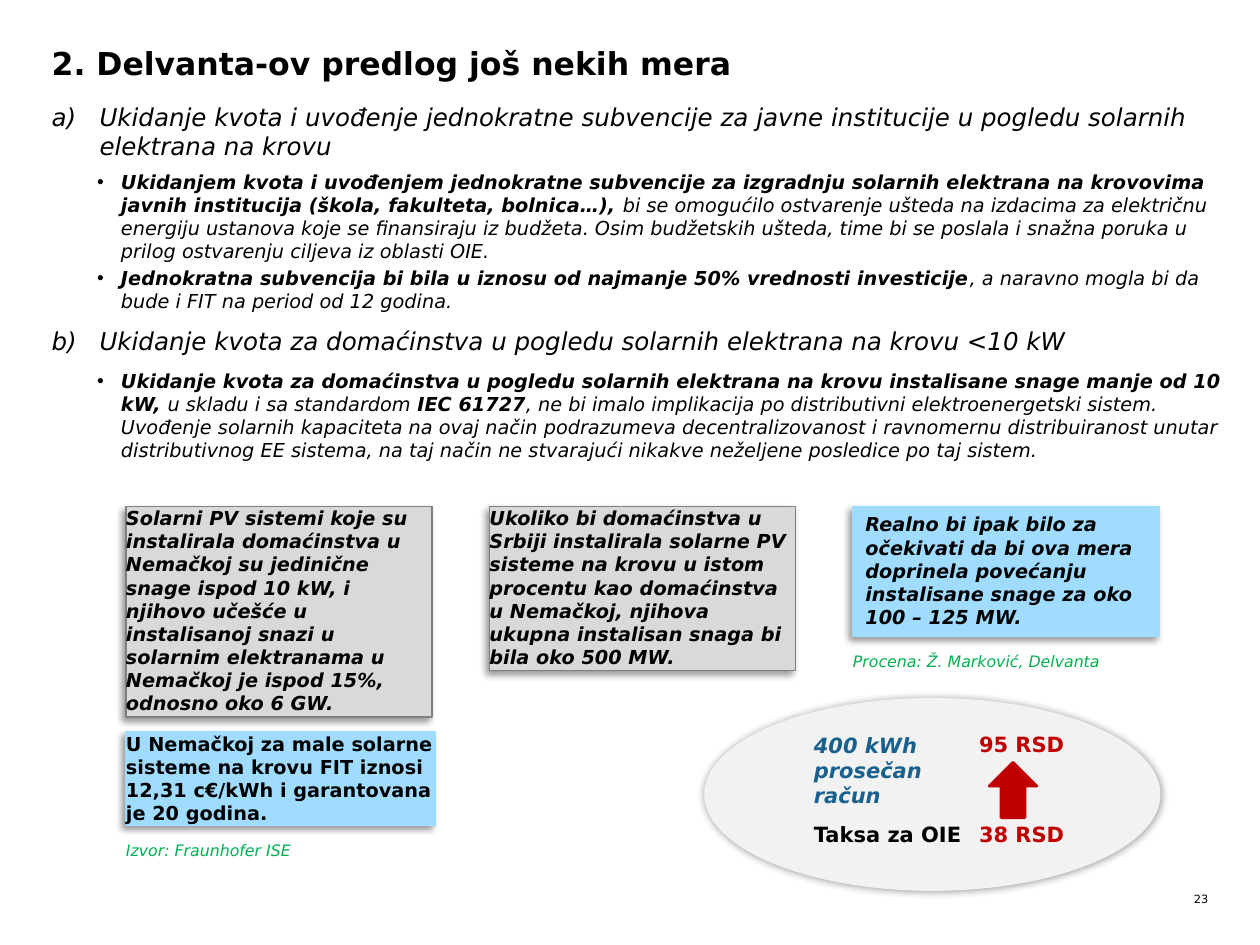
from dataclasses import dataclass

from lxml.etree import SubElement
from pptx import Presentation
from pptx.dml.color import RGBColor
from pptx.enum.shapes import MSO_SHAPE as Kind
from pptx.enum.text import MSO_ANCHOR as Anchor, MSO_AUTO_SIZE as Fit, PP_ALIGN as Align
from pptx.oxml.ns import qn
from pptx.util import Inches, Pt


@dataclass(frozen=True)
class Theme:
    font: str = "DejaVu Sans"
    ink: str = "000000"
    red: str = "C00000"
    blue: str = "17618C"
    green: str = "00B050"
    sky: str = "A0DCFF"
    gray: str = "D9D9D9"
    edge: str = "808080"
    pale: str = "F2F2F2"
    title: float = 18
    head: float = 14
    mid: float = 12
    body: float = 11
    note: float = 9
    page: float = 6.5


T = Theme()
LETTER, DOT = "letter", "dot"


def place(shape, box):
    shape.left, shape.top, shape.width, shape.height = map(Inches, box)
    return shape


def mark(para, kind, start, hang):
    """Give a paragraph a letter or a dot with a hanging indent."""
    props = para._p.get_or_add_pPr()
    props.set("marL", str(Inches(hang)))
    props.set("indent", str(-Inches(hang)))
    if kind == LETTER:
        SubElement(props, qn("a:buAutoNum"), type="alphaLcParenR", startAt=str(start))
    else:
        SubElement(props, qn("a:buChar"), char="•")


def write(shape, *paras, size=T.body, color=T.ink, bold=False, italic=False,
          align=Align.LEFT, pad=(0, 0), bullet=None, start=1, hang=0.19, gap=2):
    """Each paragraph is a string or a list of (text, bold) runs."""
    frame = shape.text_frame
    frame.word_wrap, frame.auto_size = True, Fit.NONE
    frame.vertical_anchor = Anchor.TOP
    frame.margin_left = frame.margin_right = Inches(pad[0])
    frame.margin_top = frame.margin_bottom = Inches(pad[1])
    for i, runs in enumerate(paras):
        para = frame.add_paragraph() if i else frame.paragraphs[0]
        if bullet:
            mark(para, bullet, start, hang)
        para.alignment = align
        para.space_before = Pt(gap if i else 0)
        for text, heavy in [(runs, bold)] if isinstance(runs, str) else runs:
            run = para.add_run()
            run.text = text
            font = run.font
            font.name, font.size = T.font, Pt(size)
            font.bold, font.italic = heavy, italic
            font.color.rgb = RGBColor.from_string(color)


def label(shapes, box, text, **style):
    write(shapes.add_textbox(*map(Inches, box)), text, **style)


def draw(shapes, kind, box, fill, line, width=0.75, shade=None):
    """Add a filled shape; shade is (blur, distance, angle)."""
    shape = shapes.add_shape(kind, *map(Inches, box))
    shape.shadow.inherit = False
    shape.fill.solid()
    shape.fill.fore_color.rgb = RGBColor.from_string(fill)
    shape.line.color.rgb = RGBColor.from_string(line)
    shape.line.width = Pt(width)
    if shade:
        blur, dist, angle = shade
        effects = shape._element.spPr.find(qn("a:effectLst"))
        outer = SubElement(effects, qn("a:outerShdw"), blurRad=str(Pt(blur)),
                           dist=str(Pt(dist)), dir=str(angle * 60000),
                           algn="ctr", rotWithShape="0")
        tint = SubElement(outer, qn("a:srgbClr"), val="000000")
        SubElement(tint, qn("a:alpha"), val="40000")
    return shape


def point(head, list_, tops, start, title, *paras):
    """A lettered heading with its bulleted list; tops are (y, height) pairs."""
    (y, h), (y2, h2) = tops
    write(place(head, (0.41, y, 9.12, h)), title, size=T.head, italic=True,
          bullet=LETTER, start=start, hang=0.38)
    write(place(list_, (0.77, y2, 8.96, h2)), *paras, italic=True, bullet=DOT)


def card(shapes, box, text, fill, line, italic=True, pad=(0, 0)):
    shape = draw(shapes, Kind.RECTANGLE, box, fill, line, shade=(4, 3, 135))
    write(shape, text, bold=True, italic=italic, pad=pad)


def cards(shapes, x, y):
    """Three cards in a row, one more below the first, and two credits."""
    wide = 2.43
    cols = [x + i * 2.885 for i in range(3)]
    card(shapes, (cols[0], y, wide, 1.67),
         "Solarni PV sistemi koje su instalirala domaćinstva u Nemačkoj su jedinične "
         "snage ispod 10 kW, i njihovo učešće u instalisanoj snazi u solarnim "
         "elektranama u Nemačkoj je ispod 15%, odnosno oko 6 GW.", T.gray, T.edge)
    card(shapes, (cols[1], y, wide, 1.3),
         "Ukoliko bi domaćinstva u Srbiji instalirala solarne PV sisteme na krovu u "
         "istom procentu kao domaćinstva u Nemačkoj, njihova ukupna instalisan snaga "
         "bi bila oko 500 MW.", T.gray, T.edge)
    card(shapes, (cols[2], y, wide, 1.03),
         "Realno bi ipak bilo za očekivati da bi ova mera doprinela povećanju "
         "instalisane snage za oko 100 – 125 MW.", T.sky, T.sky, pad=(0.1, 0.05))
    card(shapes, (cols[0], y + 1.79, 2.46, 0.74),
         "U Nemačkoj za male solarne sisteme na krovu FIT iznosi 12,31 c€/kWh i "
         "garantovana je 20 godina.", T.sky, T.sky, italic=False)
    for col, down, text in ((0, 2.65, "Izvor: Fraunhofer ISE"),
                            (2, 1.15, "Procena: Ž. Marković, Delvanta")):
        label(shapes, (cols[col], y + down, 2.13, 0.15), text,
              size=T.note, color=T.green, italic=True)


def bill(shapes, x, y, w, h):
    """The ellipse with the rise of the fee on an average bill."""
    draw(shapes, Kind.OVAL, (x, y, w, h), T.pale, T.pale, 1.5, shade=(5, 0, 0))
    group = shapes.add_group_shape().shapes
    left, right, top, low = x + 0.86, x + 2.17, y + 0.26, y + 0.97
    bold = dict(size=T.mid, bold=True)
    label(group, (left, top, 1.1, 0.61), "400 kWh prosečan račun",
          color=T.blue, italic=True, **bold)
    label(group, (left, low, 1.26, 0.2), "Taksa za OIE", **bold)
    label(group, (right, top, 0.88, 0.2), "95 RSD", color=T.red, **bold)
    label(group, (right, low, 0.88, 0.2), "38 RSD", color=T.red, **bold)
    draw(group, Kind.UP_ARROW, (x + 2.25, y + 0.5, 0.38, 0.44), T.red, T.red, 1.5)


def main():
    deck = Presentation()
    deck.slide_width, deck.slide_height = Inches(10), Inches(7.5)
    # The comparison layout has a title and four body boxes
    slide = deck.slides.add_slide(deck.slide_layouts[4])
    shapes = slide.shapes
    title, head_a, list_a, head_b, list_b = slide.placeholders

    write(place(title, (0.41, 0.35, 9.32, 0.4)),
          "2. Delvanta-ov predlog još nekih mera", size=T.title, bold=True)
    point(head_a, list_a, ((0.81, 0.47), (1.35, 1.14)), 1,
          "Ukidanje kvota i uvođenje jednokratne subvencije za javne institucije u "
          "pogledu solarnih elektrana na krovu",
          [("Ukidanjem kvota i uvođenjem jednokratne subvencije za izgradnju solarnih "
            "elektrana na krovovima javnih institucija (škola, fakulteta, bolnica…), ", True),
           ("bi se omogućilo ostvarenje ušteda na izdacima za električnu energiju "
            "ustanova koje se finansiraju iz budžeta. Osim budžetskih ušteda, time bi se "
            "poslala i snažna poruka u prilog ostvarenju ciljeva iz oblasti OIE.", False)],
          [("Jednokratna subvencija bi bila u iznosu od najmanje 50% vrednosti "
            "investicije", True),
           (", a naravno mogla bi da bude i FIT na period od 12 godina.", False)])
    point(head_b, list_b, ((2.59, 0.24), (2.93, 0.74)), 2,
          "Ukidanje kvota za domaćinstva u pogledu solarnih elektrana na krovu <10 kW",
          [("Ukidanje kvota za domaćinstva u pogledu solarnih elektrana na krovu "
            "instalisane snage manje od 10 kW, ", True),
           ("u skladu i sa standardom ", False), ("IEC 61727", True),
           (", ne bi imalo implikacija po distributivni elektroenergetski sistem. "
            "Uvođenje solarnih kapaciteta na ovaj način podrazumeva decentralizovanost i "
            "ravnomernu distribuiranost unutar distributivnog EE sistema, na taj način ne "
            "stvarajući nikakve neželjene posledice po taj sistem.", False)])

    cards(shapes, 1, 4.02)
    bill(shapes, 5.6, 5.55, 3.6, 1.51)
    # Page number
    label(shapes, (9.34, 7.08, 0.25, 0.11), "23", size=T.page, align=Align.RIGHT)
    deck.save("out.pptx")


if __name__ == "__main__":
    main()
